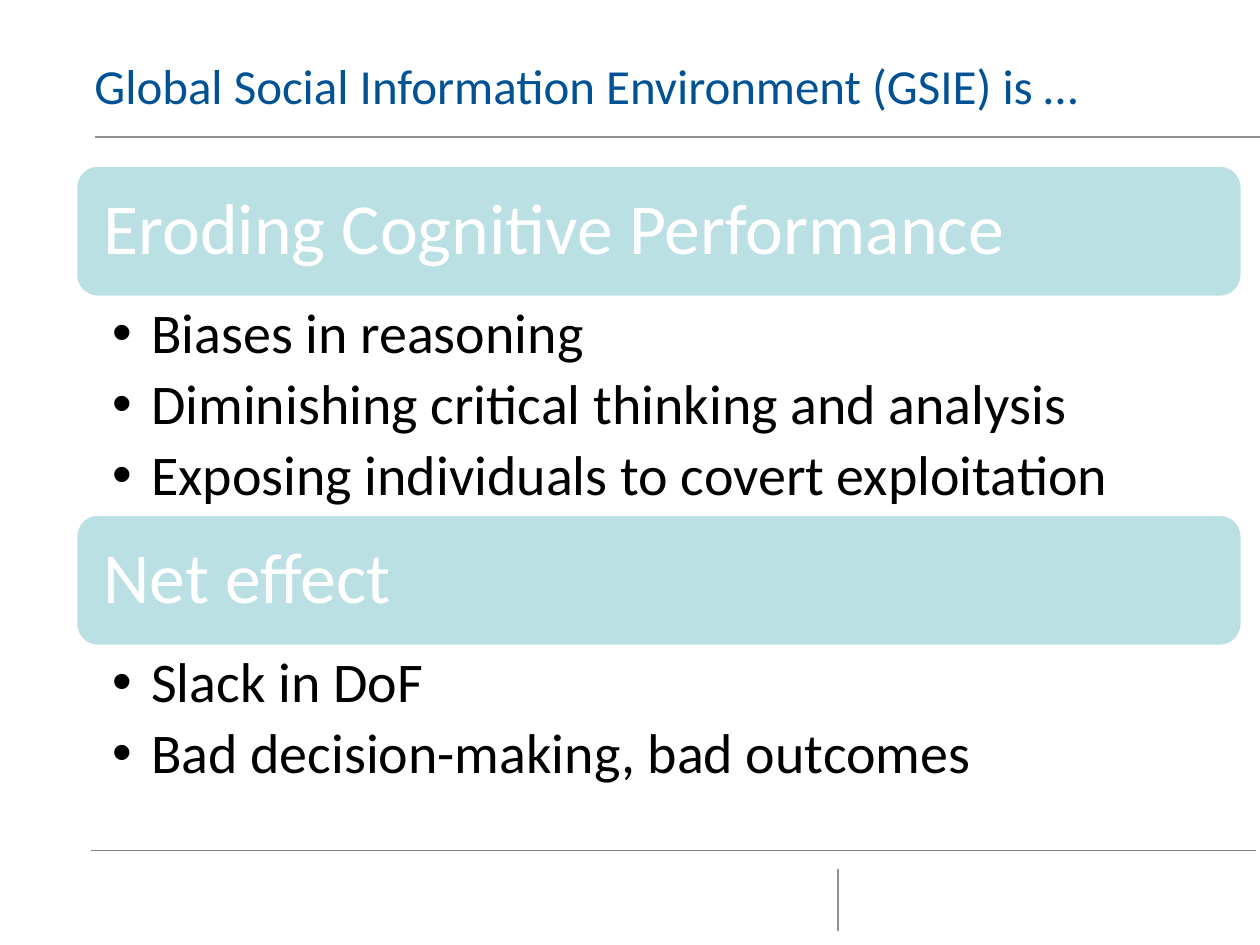
from lxml import etree
from pptx import Presentation
from pptx.dml.color import RGBColor
from pptx.enum.shapes import MSO_CONNECTOR, MSO_SHAPE
from pptx.enum.text import MSO_ANCHOR, PP_ALIGN
from pptx.oxml.ns import qn
from pptx.util import Inches, Pt

STRAIGHT = MSO_CONNECTOR.STRAIGHT
ROUNDED = MSO_SHAPE.ROUNDED_RECTANGLE
MIDDLE, TOP = MSO_ANCHOR.MIDDLE, MSO_ANCHOR.TOP
LEFT_ALIGNED = PP_ALIGN.LEFT

BLUE = RGBColor(0x00, 0x52, 0x95)
TEAL = RGBColor(0xBB, 0xE0, 0xE3)
WHITE = RGBColor(0xFF, 0xFF, 0xFF)
BLACK = RGBColor(0x00, 0x00, 0x00)
GRAY = RGBColor(0x91, 0x91, 0x94)
DARK_GRAY = RGBColor(0x80, 0x80, 0x80)

TITLE = "Global Social Information Environment (GSIE) is …"
SECTIONS = [
    ("Eroding Cognitive Performance", 1.72, [
        "Biases in reasoning",
        "Diminishing critical thinking and analysis",
        "Exposing individuals to covert exploitation",
    ]),
    ("Net effect", 1.16, [
        "Slack in DoF",
        "Bad decision-making, bad outcomes",
    ]),
]
RULES = [
    (0.72, 6.75, 9.97, 6.75, DARK_GRAY),
    (0.75, 1.09, 10, 1.09, GRAY),
    (6.65, 7.39, 6.65, 6.9, GRAY),
]
LEFT, WIDTH = 0.6, 9.26
FIRST_TOP, HEADER_HEIGHT = 1.31, 1.05
BULLET_INDENT = Inches(0.31)


def add_rule(page, x1, y1, x2, y2, color):
    rule = page.shapes.add_connector(
        STRAIGHT, Inches(x1), Inches(y1), Inches(x2), Inches(y2))
    rule.line.color.rgb = color
    rule.line.width = Pt(1)
    etree.SubElement(rule._element.spPr, qn("a:effectLst"))


def set_frame(box, insets, anchor):
    frame = box.text_frame
    frame.word_wrap = True
    frame.vertical_anchor = anchor
    (frame.margin_left, frame.margin_top,
     frame.margin_right, frame.margin_bottom) = map(Inches, insets)
    return frame


def format_paragraph(paragraph, size, color, line_spacing):
    paragraph.alignment = LEFT_ALIGNED
    paragraph.line_spacing = line_spacing
    font = paragraph.font
    font.name, font.size, font.color.rgb = "Calibri", Pt(size), color


def add_bullet(paragraph):
    properties = paragraph._p.get_or_add_pPr()
    properties.set("marL", str(BULLET_INDENT))
    properties.set("indent", str(-BULLET_INDENT))
    etree.SubElement(properties, qn("a:buFont"), typeface="Arial")
    etree.SubElement(properties, qn("a:buChar"), char="•")


def add_text_box(page, left, top, width, height, insets):
    box = page.shapes.add_textbox(
        Inches(left), Inches(top), Inches(width), Inches(height))
    return set_frame(box, insets, TOP)


def add_header(page, text, top):
    header = page.shapes.add_shape(
        ROUNDED, Inches(LEFT), Inches(top), Inches(WIDTH), Inches(HEADER_HEIGHT))
    header.shadow.inherit = False
    header.fill.solid()
    header.fill.fore_color.rgb = TEAL
    header.line.color.rgb = WHITE
    header.line.width = Pt(2)
    frame = set_frame(header, (0.17, 0.17, 0.17, 0.17), MIDDLE)
    frame.text = text
    format_paragraph(frame.paragraphs[0], 41, WHITE, 0.9)


def add_bullets(page, items, top, height):
    frame = add_text_box(page, LEFT, top, WIDTH, height, (0.29, 0.06, 0.32, 0.06))
    frame.text = "\n".join(items)
    for paragraph in frame.paragraphs:
        add_bullet(paragraph)
        format_paragraph(paragraph, 32, BLACK, 0.9)
        paragraph.space_after = Pt(6)


def main():
    deck = Presentation()
    deck.slide_width, deck.slide_height = Inches(10), Inches(7.5)
    page = deck.slides.add_slide(deck.slide_layouts[6])

    for rule in RULES:
        add_rule(page, *rule)

    title = add_text_box(page, 0.75, 0.46, 8.63, 1.04, (0, 0, 0, 0))
    title.text = TITLE
    format_paragraph(title.paragraphs[0], 28, BLUE, Pt(32))

    top = FIRST_TOP
    for heading, body_height, items in SECTIONS:
        add_header(page, heading, top)
        add_bullets(page, items, top + HEADER_HEIGHT, body_height)
        top += HEADER_HEIGHT + body_height

    deck.save("out.pptx")


if __name__ == "__main__":
    main()
